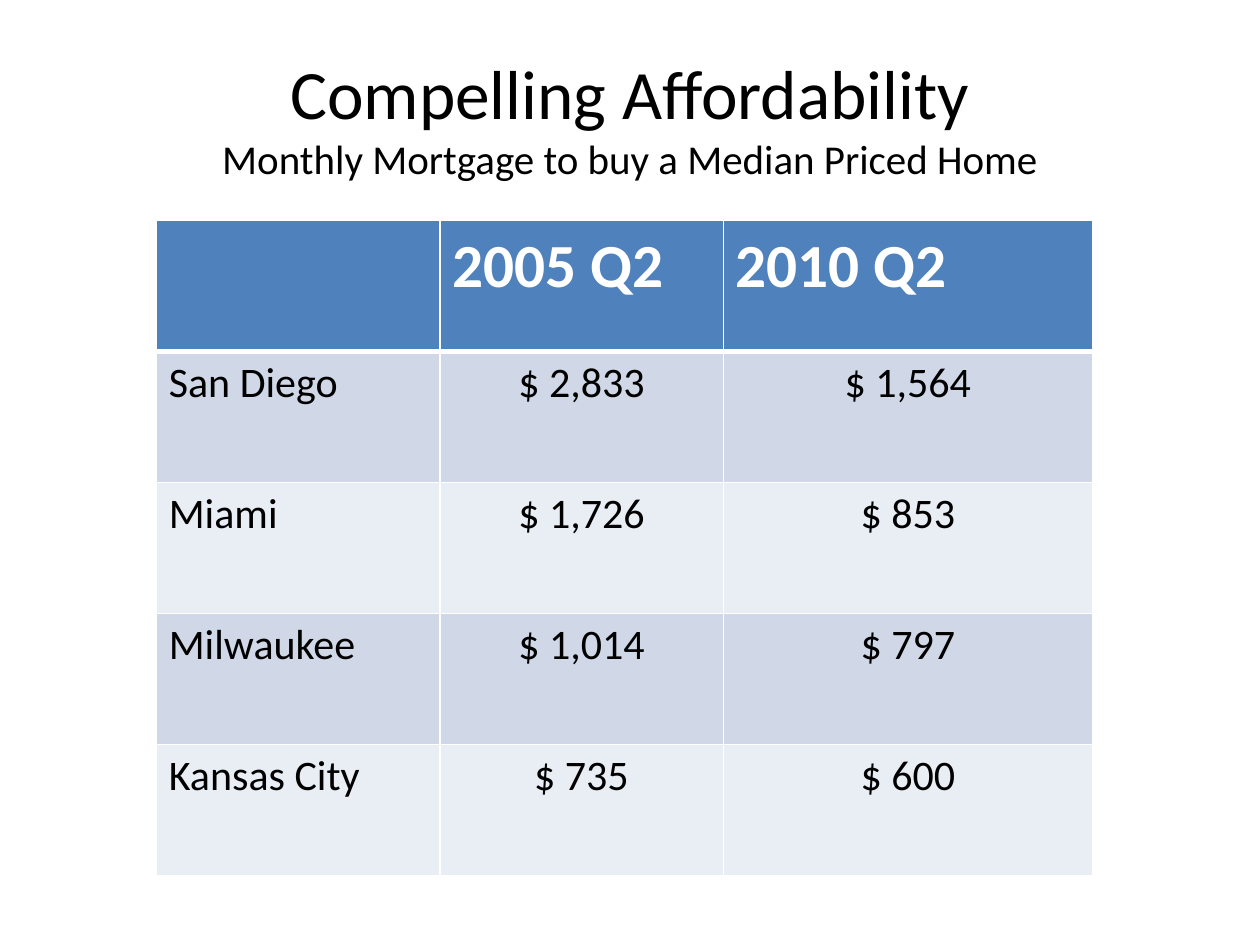
from lxml.etree import SubElement
from pptx import Presentation
from pptx.dml.color import RGBColor
from pptx.enum.text import MSO_ANCHOR, PP_ALIGN
from pptx.oxml.ns import qn
from pptx.util import Inches, Pt

FONT = "Calibri"
HUES = {"text": "000000", "head": "4F81BD", "odd": "D0D8E8",
        "even": "E9EDF4", "line": "FFFFFF"}
ROWS = [
    ("", "2005 Q2", "2010 Q2"),
    ("San Diego", "$ 2,833", "$ 1,564"),
    ("Miami", "$ 1,726", "$ 853"),
    ("Milwaukee", "$ 1,014", "$ 797"),
    ("Kansas City", "$ 735", "$ 600"),
]


class Deck:
    def __init__(self, wide, high):
        self.prs = Presentation()
        self.prs.slide_width, self.prs.slide_height = Inches(wide), Inches(high)
        self.slide = self.prs.slides.add_slide(self.prs.slide_layouts[5])

    def box(self, left, top, wide, high):
        """Turn shares of the slide into lengths."""
        w, h = self.prs.slide_width, self.prs.slide_height
        return int(left * w), int(top * h), int(wide * w), int(high * h)

    def style(self, run, size, hue="text", bold=False):
        font = run.font
        font.name, font.size, font.bold = FONT, Pt(size), bold
        font.color.rgb = RGBColor.from_string(HUES[hue])

    def title(self, lines, sizes, area):
        shape = self.slide.shapes.title
        shape.left, shape.top, shape.width, shape.height = self.box(*area)
        frame = shape.text_frame
        frame.text = "\v".join(lines)
        frame.vertical_anchor = MSO_ANCHOR.MIDDLE
        para = frame.paragraphs[0]
        para.alignment = PP_ALIGN.CENTER
        for run, size in zip(para.runs, sizes):
            self.style(run, size)
        # The line break takes the size of the first line
        for mark in para._p.findall(qn("a:br")):
            SubElement(mark, qn("a:rPr"), sz=str(round(sizes[0] * 100)))

    def edge(self, cell, side, width):
        line = SubElement(cell._tc.get_or_add_tcPr(), qn(f"a:ln{side}"),
                          w=str(Pt(width)))
        fill = SubElement(line, qn("a:solidFill"))
        SubElement(fill, qn("a:srgbClr"), val=HUES["line"])

    def cell(self, cell, text, row, col):
        head = row == 0
        for side in "LRTB":
            thick = (head and side == "B") or (row == 1 and side == "T")
            self.edge(cell, side, 3 if thick else 1)
        cell.fill.solid()
        hue = "head" if head else "odd" if row % 2 else "even"
        cell.fill.fore_color.rgb = RGBColor.from_string(HUES[hue])
        if head:
            cell.margin_top = cell.margin_bottom = Inches(0.07)
        cell.text_frame.text = text
        para = cell.text_frame.paragraphs[0]
        if col and not head:
            para.alignment = PP_ALIGN.CENTER
        for run in para.runs:
            self.style(run, 35 if head else 24, "line" if head else "text", head)

    def table(self, rows, parts, area):
        left, top, wide, high = self.box(*area)
        grid = self.slide.shapes.add_table(
            len(rows), len(parts), left, top, wide, high).table
        for col, part in zip(grid.columns, parts):
            col.width = int(wide * part / sum(parts))
        for r, row in enumerate(rows):
            for c, text in enumerate(row):
                self.cell(grid.cell(r, c), text, r, c)


def main():
    deck = Deck(10, 7.5)
    # Heading with its smaller second line
    deck.title(("Compelling Affordability",
                "Monthly Mortgage to buy a Median Priced Home"),
               (39.6, 23.4), (0.05, 0.04, 0.9, 1 / 6))
    # Mortgage by city
    deck.table(ROWS, (2.25, 2.25, 2.93),
               (0.124, 1.75 / 7.5, 0.743, 5.2 / 7.5))
    deck.prs.save("out.pptx")


if __name__ == "__main__":
    main()
